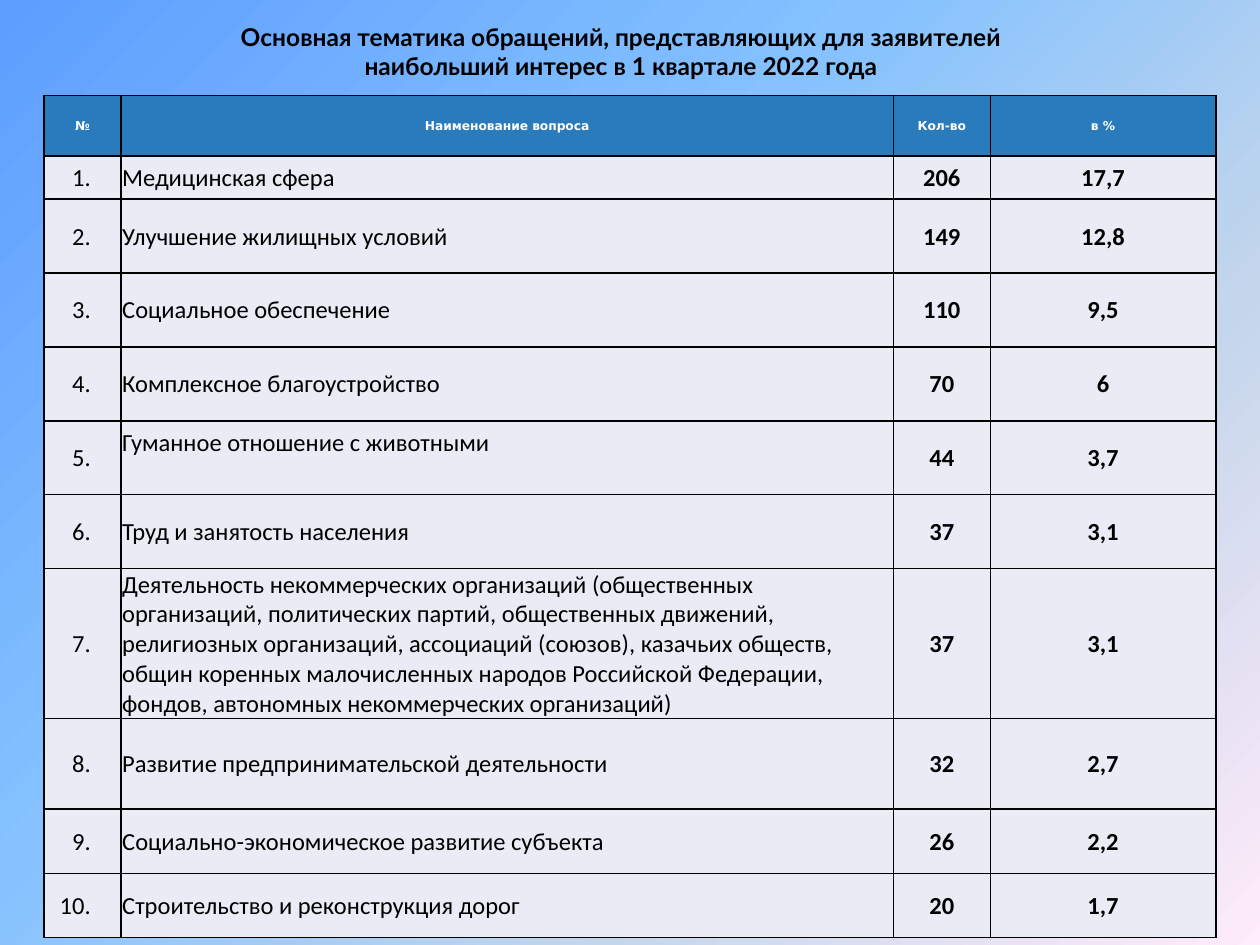
"""Build the slide on the main topics of citizens' appeals."""
from copy import deepcopy
from typing import NamedTuple

from lxml import etree
from pptx import Presentation
from pptx import util as u
from pptx.dml.color import RGBColor
from pptx.enum import text
from pptx.oxml.ns import qn

WIDTH, HEIGHT = 10, 7.5
LEFT, TOP = 0.35, 0.76
INSET = 0.01
BLACK, WHITE, HEADER_FILL, BODY_FILL = "000000", "FFFFFF", "297BBC", "E9EBF5"
SKY = {0: "5E9EFF", 0.4: "85C2FF", 0.7: "C4D6EB", 1: "FFEBFA"}
TITLE = ("Основная тематика обращений, представляющих для заявителей\v"
         "наибольший интерес в 1 квартале 2022 года")
TITLE_FONT = {"name": "Lato", "size": u.Pt(14), "bold": True}
HEADER_FONT = {"name": "DejaVu Sans", "size": u.Pt(7), "bold": True}
BODY_FONT = {"name": "Calibri", "size": u.Pt(14), "bold": False}
COUNT_FONT = BODY_FONT | {"bold": True}
CENTER, START, END = text.PP_ALIGN.CENTER, text.PP_ALIGN.LEFT, text.PP_ALIGN.RIGHT


class Column(NamedTuple):
    heading: str
    width: float
    align: text.PP_ALIGN
    font: dict
    right: float = INSET


class Topic(NamedTuple):
    name: str
    count: str
    percent: str
    height: float = 0.587
    lift: float = 0


COLUMNS = [
    Column("№", 0.61, END, BODY_FONT, 0.24),
    Column("Наименование вопроса", 6.13, START, BODY_FONT),
    Column("Кол-во", 0.77, CENTER, COUNT_FONT),
    Column("в %", 1.79, CENTER, COUNT_FONT),
]
HEADER_HEIGHT = 0.48
TOPICS = [
    Topic("Медицинская сфера", "206", "17,7", 0.34),
    Topic("Улучшение жилищных условий", "149", "12,8"),
    Topic("Социальное обеспечение", "110", "9,5"),
    Topic("Комплексное благоустройство", "70", "6"),
    Topic("Гуманное отношение с животными", "44", "3,7", lift=0.24),
    Topic("Труд и занятость населения", "37", "3,1"),
    Topic("Деятельность некоммерческих организаций (общественных организаций, "
          "политических партий, общественных движений, религиозных организаций, "
          "ассоциаций (союзов), казачьих обществ, общин коренных малочисленных "
          "народов Российской Федерации, фондов, автономных некоммерческих "
          "организаций)", "37", "3,1", 1.19),
    Topic("Развитие предпринимательской деятельности", "32", "2,7", 0.72),
    Topic("Социально-экономическое развитие субъекта", "26", "2,2", 0.51),
    Topic("Строительство и реконструкция дорог", "20", "1,7", 0.51),
]


def color(value: str) -> RGBColor:
    """Turn a hex string into a colour."""
    return RGBColor.from_string(value)


def set_all(target, values: dict) -> None:
    """Set every attribute named in the dict."""
    for name, value in values.items():
        setattr(target, name, value)


def write(frame, words: str, font: dict, ink: str, align: text.PP_ALIGN) -> None:
    """Write one formatted paragraph."""
    paragraph = frame.paragraphs[0]
    paragraph.text = words
    paragraph.alignment = align
    for run in paragraph.runs:
        set_all(run.font, font)
        run.font.color.rgb = color(ink)


def paint_sky(slide) -> None:
    """Fill the background with the diagonal gradient."""
    fill = slide.background.fill
    fill.gradient()
    fill.gradient_angle = 315
    stops = next(slide.element.iter(qn("a:gsLst")))
    while len(stops) < len(SKY):
        stops.append(deepcopy(stops[-1]))
    for stop, (position, value) in zip(fill.gradient_stops, SKY.items()):
        stop.position = position
        stop.color.rgb = color(value)


def add_title(slide) -> None:
    """Add the heading above the table."""
    box = slide.shapes.add_textbox(*map(u.Inches, (LEFT, 0.13, 9.16, 0.55)))
    box.text_frame.word_wrap = True
    box.text_frame.vertical_anchor = text.MSO_ANCHOR.MIDDLE
    write(box.text_frame, TITLE, TITLE_FONT, BLACK, CENTER)


def draw_borders(cell) -> None:
    """Draw a thin black line on each side of the cell."""
    properties = cell._tc.get_or_add_tcPr()
    for place, side in enumerate(("lnL", "lnR", "lnT", "lnB")):
        line = etree.Element(qn(f"a:{side}"), w=str(u.Pt(1)))
        solid = etree.SubElement(line, qn("a:solidFill"))
        etree.SubElement(solid, qn("a:srgbClr"), val=BLACK)
        properties.insert(place, line)


def fill_cell(cell, words: str, font: dict, ink: str, fill: str,
              align: text.PP_ALIGN, right: float = INSET, bottom: float = 0) -> None:
    """Format one table cell and write its text."""
    set_all(cell, {"margin_left": u.Inches(INSET), "margin_right": u.Inches(right),
                   "margin_top": u.Inches(INSET), "margin_bottom": u.Inches(bottom),
                   "vertical_anchor": text.MSO_ANCHOR.MIDDLE})
    cell.fill.solid()
    cell.fill.fore_color.rgb = color(fill)
    draw_borders(cell)
    write(cell.text_frame, words, font, ink, align)


def add_topics(slide) -> None:
    """Add the table of topics."""
    widths = [column.width for column in COLUMNS]
    heights = [HEADER_HEIGHT, *(topic.height for topic in TOPICS)]
    table = slide.shapes.add_table(
        len(heights), len(widths),
        *map(u.Inches, (LEFT, TOP, sum(widths), sum(heights)))).table
    table.horz_banding = False
    for row, height in zip(table.rows, heights):
        row.height = u.Inches(height)
    for x, column in enumerate(COLUMNS):
        table.columns[x].width = u.Inches(column.width)
        fill_cell(table.cell(0, x), column.heading, HEADER_FONT, WHITE,
                  HEADER_FILL, CENTER)
        for y, topic in enumerate(TOPICS, 1):
            words = (f"{y}.", topic.name, topic.count, topic.percent)[x]
            lift = topic.lift if words == topic.name else 0
            fill_cell(table.cell(y, x), words, column.font, BLACK, BODY_FILL,
                      column.align, column.right, lift)


def main() -> None:
    """Build and save the slide."""
    deck = Presentation()
    deck.slide_width, deck.slide_height = u.Inches(WIDTH), u.Inches(HEIGHT)
    slide = deck.slides.add_slide(deck.slide_layouts[6])
    paint_sky(slide)
    add_title(slide)
    add_topics(slide)
    deck.save("out.pptx")


if __name__ == "__main__":
    main()
